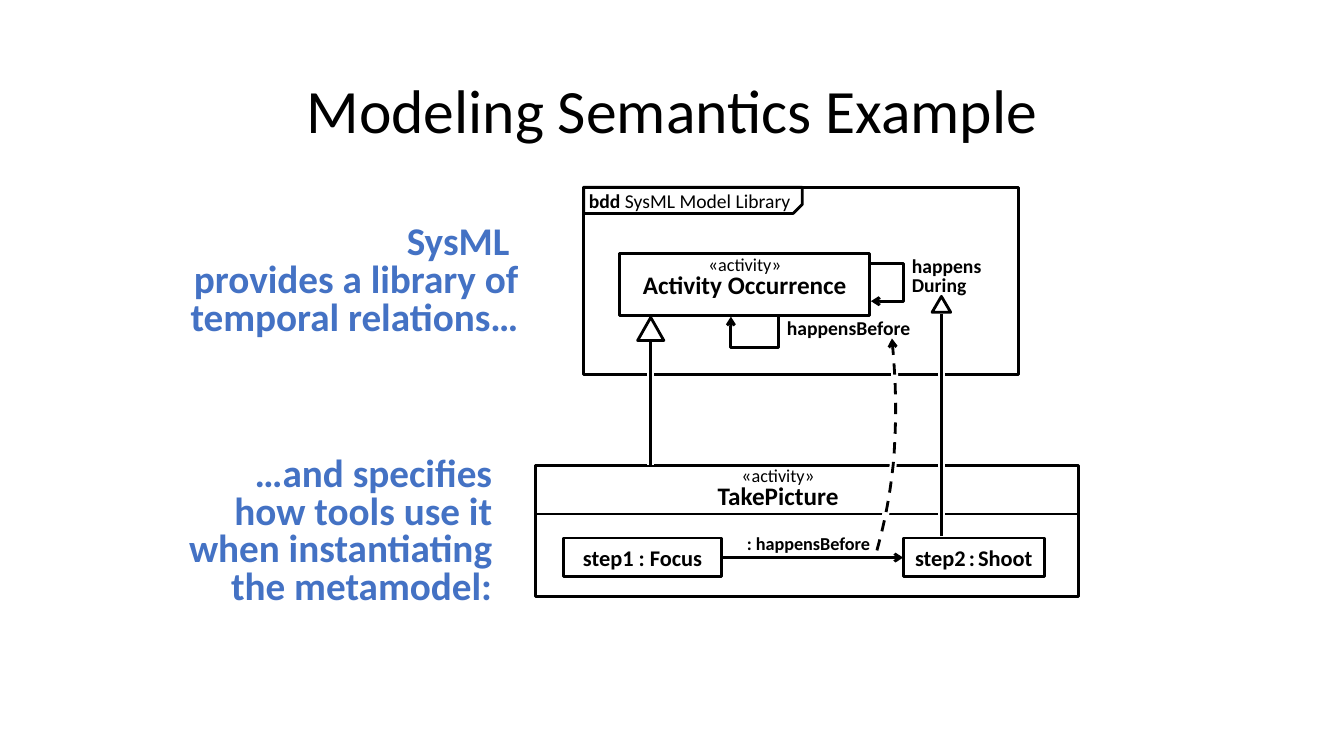
from lxml import etree
from pptx import Presentation
from pptx.dml.color import RGBColor
from pptx.enum.dml import MSO_LINE
from pptx.enum.shapes import MSO_CONNECTOR, MSO_SHAPE
from pptx.enum.text import MSO_ANCHOR, MSO_AUTO_SIZE, PP_ALIGN
from pptx.oxml.ns import qn
from pptx.util import Cm, Pt

BLACK = RGBColor(0x00, 0x00, 0x00)
WHITE = RGBColor(0xFF, 0xFF, 0xFF)
BLUE = RGBColor(0x44, 0x72, 0xC4)
HALO = ((WHITE, 5), (BLACK, 2))
ACTIVITY = [("«", 14, False), ("activity", 13, False), ("»", 14, False)]


def bezier(start, first, second, end, steps=12):
    for step in range(1, steps + 1):
        t = step / steps
        weights = ((1 - t) ** 3, 3 * t * (1 - t) ** 2, 3 * t ** 2 * (1 - t), t ** 3)
        corners = (start, first, second, end)
        yield tuple(sum(w * corner[axis] for w, corner in zip(weights, corners))
                    for axis in (0, 1))


class Diagram:
    font = "Calibri"
    line_width = 2

    def __init__(self, slide):
        self.slide = slide

    def outline(self, shape, color=BLACK, width=None, arrow=False, dash=None):
        shape.line.color.rgb = color
        shape.line.width = Pt(width or self.line_width)
        if dash:
            shape.line.dash_style = dash
        if arrow:
            line = shape.element.spPr.find(qn("a:ln"))
            etree.SubElement(line, qn("a:tailEnd"), type="arrow")

    def fill_text(self, shape, paragraphs, color=BLACK, align=PP_ALIGN.LEFT, spacing=1.0,
                  insets=(0.25, 0.13, 0.25, 0.13), **frame_format):
        frame = shape.text_frame
        sides = ("margin_left", "margin_top", "margin_right", "margin_bottom")
        values = {"word_wrap": True, "vertical_anchor": MSO_ANCHOR.TOP, **frame_format}
        values.update(zip(sides, map(Cm, insets)))
        for name, value in values.items():
            setattr(frame, name, value)
        for index, runs in enumerate(paragraphs):
            paragraph = frame.add_paragraph() if index else frame.paragraphs[0]
            paragraph.alignment = align
            paragraph.line_spacing = spacing
            for text, size, bold in runs:
                run = paragraph.add_run()
                run.text = text
                run.font.color.rgb = color
                font_format = {"name": self.font, "size": Pt(size), "bold": bold}
                for name, value in font_format.items():
                    setattr(run.font, name, value)

    def title(self, text, box):
        title = self.slide.shapes.title
        for name, value in zip(("left", "top", "width", "height"), map(Cm, box)):
            setattr(title, name, value)
        self.fill_text(title, [[(text, 44, False)]], align=PP_ALIGN.CENTER, spacing=0.9,
                       vertical_anchor=MSO_ANCHOR.MIDDLE)

    def block(self, box, kind=MSO_SHAPE.RECTANGLE, fill=None):
        shape = self.slide.shapes.add_shape(kind, *map(Cm, box))
        shape.shadow.inherit = False
        if fill is None:
            shape.fill.background()
        else:
            shape.fill.solid()
            shape.fill.fore_color.rgb = fill
        self.outline(shape)
        return shape

    def step(self, box, runs, fill=None):
        self.fill_text(self.block(box, fill=fill), [runs], align=PP_ALIGN.CENTER,
                       insets=(0, 0.13, 0, 0.13), word_wrap=False,
                       vertical_anchor=MSO_ANCHOR.MIDDLE)

    def label(self, box, lines, size, **text_format):
        shape = self.slide.shapes.add_textbox(*map(Cm, box))
        self.fill_text(shape, [[(line, size, True)] for line in lines],
                       auto_size=MSO_AUTO_SIZE.SHAPE_TO_FIT_TEXT, **text_format)

    def line(self, start, end, **line_format):
        connector = self.slide.shapes.add_connector(
            MSO_CONNECTOR.STRAIGHT, *map(Cm, (*start, *end)))
        self.outline(connector, **line_format)
        etree.SubElement(connector.element.spPr, qn("a:effectLst"))

    def bent_arrow(self, points, **line_format):
        points = [(Cm(x), Cm(y)) for x, y in points]
        builder = self.slide.shapes.build_freeform(*points[0])
        builder.add_line_segments(points[1:], close=False)
        shape = builder.convert_to_shape()
        shape.shadow.inherit = False
        shape.fill.background()
        self.outline(shape, arrow=True, **line_format)

    def generalization(self, start, end):
        for color, width in HALO:
            self.line(start, end, color=color, width=width)


def main():
    presentation = Presentation()
    presentation.slide_width, presentation.slide_height = Cm(33.87), Cm(19.05)
    slide = presentation.slides.add_slide(presentation.slide_layouts[5])
    diagram = Diagram(slide)
    diagram.title("Modeling Semantics Example", (2.34, 1.02, 29.21, 3.68))

    library = diagram.block((14.71, 4.72, 10.95, 4.72))
    diagram.fill_text(library, [[("bdd ", 14, True), ("SysML Model Library", 14, False)]],
                      insets=(0.13, 0.05, 0.25, 0.13))
    tab = diagram.block((14.71, 4.72, 5.51, 0.66), MSO_SHAPE.SNIP_1_RECTANGLE)
    tab.adjustments[0] = 0.35
    tab.element.spPr.find(qn("a:xfrm")).set("flipV", "1")

    take_picture = diagram.block((13.49, 11.73, 13.69, 3.3), fill=WHITE)
    diagram.fill_text(take_picture, [ACTIVITY, [("TakePicture", 18, True)]],
                      align=PP_ALIGN.CENTER, spacing=0.8, insets=(0.25, 0.05, 1.7, 0.13))
    diagram.step((14.2, 13.56, 3.99, 0.97), [("step1 : Focus", 16, True)])
    diagram.line((18.19, 14.05), (22.76, 14.05), arrow=True)
    diagram.label((18.57, 13.28, 3.66, 0.81), [": happensBefore"], 13, word_wrap=False)
    diagram.line((13.49, 12.95), (27.18, 12.95))

    diagram.bent_arrow([(18.67, 7.32), (19.61, 7.32), (19.61, 8.76),
                        (18.42, 8.76), (18.42, 7.98)])
    diagram.label((19.58, 7.92, 3.63, 0.76), ["happensBefore"], 14,
                  spacing=0.85, word_wrap=False)
    diagram.label((22.73, 6.38, 2.31, 1.22), ["happens", "During"], 14,
                  spacing=0.8, word_wrap=False)
    diagram.bent_arrow([(21.95, 6.65), (22.78, 6.65), (22.78, 7.59), (21.95, 7.59)])

    bottom, middle, top = (22.1, 13.87), (22.53, 11.51), (22.48, 8.53)
    instantiation = [bottom,
                     *bezier(bottom, (22.3, 13.16), (22.45, 12.4), middle),
                     *bezier(middle, (22.58, 10.62), (22.61, 9.93), top)]
    for (color, width), dash in zip(HALO, (None, MSO_LINE.DASH)):
        diagram.bent_arrow(instantiation, color=color, width=width, dash=dash)

    diagram.step((22.76, 13.56, 3.56, 0.97),
                 [("step2", 16, True), (" ", 10, True), (":", 16, True),
                  (" ", 10, True), ("Shoot", 16, True)], fill=WHITE)
    diagram.generalization((23.72, 13.51), (23.72, 7.9))

    occurrence = diagram.block((15.62, 6.38, 6.3, 1.57), fill=WHITE)
    diagram.fill_text(occurrence, [ACTIVITY, [("Activity Occurrence", 18, True)]],
                      align=PP_ALIGN.CENTER, spacing=0.8, insets=(0.25, 0.08, 0.25, 0.13))
    diagram.block((23.49, 7.47, 0.47, 0.4), MSO_SHAPE.ISOSCELES_TRIANGLE, WHITE)

    note = {"color": BLUE, "align": PP_ALIGN.RIGHT, "spacing": 0.8}
    diagram.label((1.52, 5.56, 11.79, 3.12),
                  ["SysML ", "provides a library of", "temporal relations…"], 28, **note)
    diagram.label((4.37, 11.4, 8.28, 4.09),
                  ["…and specifies how tools use it when instantiating the metamodel:"],
                  28, **note)

    diagram.generalization((16.4, 11.71), (16.4, 8.61))
    diagram.block((16.07, 8, 0.66, 0.58), MSO_SHAPE.ISOSCELES_TRIANGLE, WHITE)

    presentation.save("out.pptx")


if __name__ == "__main__":
    main()
